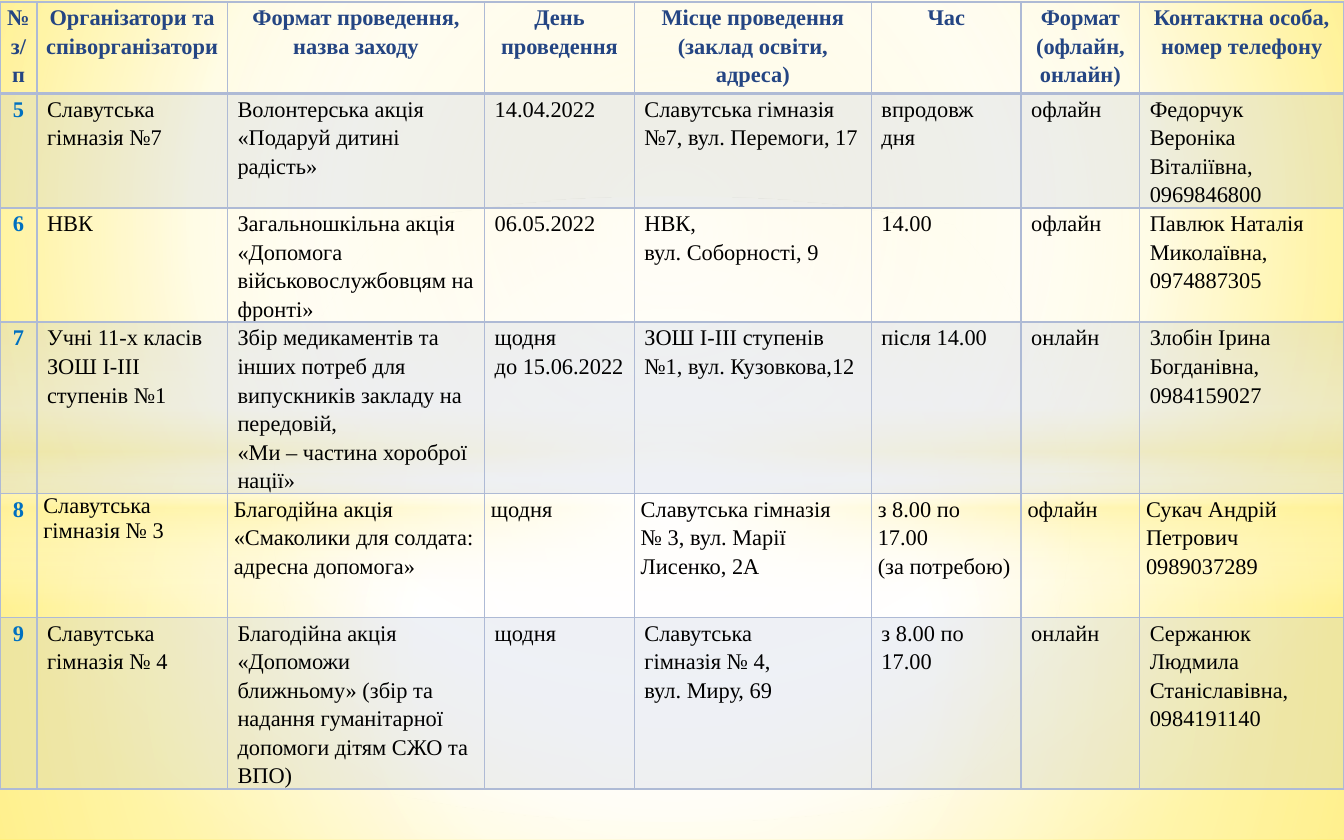
from typing import NamedTuple, Optional

from lxml import etree
from pptx import Presentation
from pptx.dml.color import RGBColor
from pptx.enum.shapes import MSO_SHAPE
from pptx.enum.text import MSO_ANCHOR, PP_ALIGN
from pptx.oxml.ns import qn
from pptx.util import Cm, Pt

RECTANGLE, OVAL = MSO_SHAPE.RECTANGLE, MSO_SHAPE.OVAL
CENTER, LEFT, TOP = PP_ALIGN.CENTER, PP_ALIGN.LEFT, MSO_ANCHOR.TOP

FONT = "Times New Roman"
GRID, HEADING, NUMBER, BLACK = "AEBAD5", "244583", "0070C0", "000000"
WHITE, YELLOW = "FFFFFF", "FFF39D"
WIDTH, HEIGHT = 25.4, 15.88
HORIZON = 8.94
NARROW, WIDE = 0.12, 0.19


class Stop(NamedTuple):
    position: int
    color: str
    opacity: int = 100


class Glow(NamedTuple):
    outline: int
    top: float
    height: float
    stops: list[Stop]
    focus: Optional[tuple[int, int, int, int]] = (50, 50, 50, 50)


class Event(NamedTuple):
    number: str
    organizer: str
    name: str
    day: str
    place: str
    time: str
    mode: str
    contact: str
    height: float
    inset: float = WIDE
    organizer_spacing: float = 1.15


class Style(NamedTuple):
    color: str
    bold: bool
    align: int
    inset: float
    spacing: float = 1.15


BACKDROP = [Stop(0, "FFF18D"), Stop(60, WHITE), Stop(100, "FFE94E")]
GLOWS = [
    Glow(RECTANGLE, HORIZON, HEIGHT - HORIZON,
         [Stop(0, WHITE, 91), Stop(37, WHITE, 76), Stop(100, YELLOW, 79)]),
    Glow(RECTANGLE, 0, HORIZON,
         [Stop(0, WHITE, 89), Stop(48, WHITE, 62), Stop(100, YELLOW, 79)]),
    Glow(RECTANGLE, 6.15, 5.28,
         [Stop(0, WHITE, 0), Stop(29, WHITE, 30), Stop(45, YELLOW, 40),
          Stop(55, WHITE, 26), Stop(65, YELLOW, 60), Stop(100, WHITE, 0)], None),
    Glow(OVAL, 3.71, 11.81, [Stop(0, WHITE), Stop(54, WHITE, 0)]),
]

COLUMN_WIDTHS = [0.7, 3.6, 4.86, 2.83, 4.48, 2.83, 2.24, 3.86]
HEADER_HEIGHT = 1.73
HEADERS = [
    "№\nз/п",
    "Організатори та співорганізатори",
    "Формат проведення, назва заходу",
    "День проведення",
    "Місце проведення\n(заклад освіти, адреса)",
    "Час",
    "Формат\n(офлайн, онлайн)",
    "Контактна особа,\nномер телефону",
]
EVENTS = [
    Event("5", "Славутська гімназія №7", "Волонтерська акція «Подаруй дитині радість»",
          "14.04.2022", "Славутська гімназія №7, вул. Перемоги, 17", "впродовж дня",
          "офлайн", "Федорчук Вероніка Віталіївна, 0969846800", 2.06),
    Event("6", "НВК", "Загальношкільна акція «Допомога військовослужбовцям на фронті»",
          "06.05.2022", "НВК,\nвул. Соборності, 9", "14.00",
          "офлайн", "Павлюк Наталія Миколаївна,\n0974887305", 2.06),
    Event("7", "Учні 11-х класів\nЗОШ І-ІІІ ступенів №1",
          "Збір медикаментів та інших потреб для випускників закладу на передовій,\n"
          "«Ми – частина хороброї нації»",
          "щодня\nдо 15.06.2022", "ЗОШ І-ІІІ ступенів №1, вул. Кузовкова,12",
          "після 14.00", "онлайн", "Злобін Ірина Богданівна,\n0984159027", 2.9),
    Event("8", "Славутська гімназія № 3",
          "Благодійна акція «Смаколики для солдата: адресна допомога»",
          "щодня", "Славутська гімназія\n№ 3, вул. Марії Лисенко, 2А",
          "з 8.00 по 17.00\n(за потребою)", "офлайн",
          "Сукач Андрій Петрович\n0989037289", 2.34, NARROW, 1.0),
    Event("9", "Славутська гімназія № 4",
          "Благодійна акція «Допоможи ближньому» (збір та надання гуманітарної "
          "допомоги дітям СЖО та ВПО)",
          "щодня", "Славутська\nгімназія № 4,\nвул. Миру, 69", "з 8.00 по 17.00",
          "онлайн", "Сержанюк Людмила Станіславівна,\n0984191140", 2.44),
]


def rgb(color: str) -> RGBColor:
    return RGBColor.from_string(color)


def add_color(parent, color: str, opacity: int = 100) -> None:
    tint = etree.SubElement(parent, qn("a:srgbClr"), val=color)
    if opacity < 100:
        etree.SubElement(tint, qn("a:alpha"), val=str(opacity * 1000))


def set_gradient(properties, stops: list[Stop], focus) -> None:
    solid = properties.find(qn("a:solidFill"))
    gradient = etree.Element(qn("a:gradFill"), rotWithShape="1")
    stop_list = etree.SubElement(gradient, qn("a:gsLst"))
    for stop in stops:
        entry = etree.SubElement(stop_list, qn("a:gs"), pos=str(stop.position * 1000))
        add_color(entry, stop.color, stop.opacity)
    if focus:
        radial = etree.SubElement(gradient, qn("a:path"), {"path": "circle"})
        sides = {side: str(value * 1000) for side, value in zip("ltrb", focus)}
        etree.SubElement(radial, qn("a:fillToRect"), sides)
    else:
        etree.SubElement(gradient, qn("a:lin"), ang="5400000", scaled="0")
    properties.replace(solid, gradient)


def draw_glow(slide, glow: Glow) -> None:
    shape = slide.shapes.add_shape(glow.outline, 0, Cm(glow.top), Cm(WIDTH), Cm(glow.height))
    shape.shadow.inherit = False
    shape.line.fill.background()
    shape.fill.solid()
    set_gradient(shape._element.spPr, glow.stops, glow.focus)


def set_borders(cell, top: float, bottom: float) -> None:
    properties = cell._tc.get_or_add_tcPr()
    for index, (side, points) in enumerate(zip("LRTB", (1, 1, top, bottom))):
        border = etree.Element(qn(f"a:ln{side}"), w=str(Pt(points)))
        add_color(etree.SubElement(border, qn("a:solidFill")), GRID)
        properties.insert(index, border)


def shade(cell, shaded: bool) -> None:
    if not shaded:
        cell.fill.background()
        return
    cell.fill.solid()
    cell.fill.fore_color.rgb = rgb(GRID)
    tint = cell._tc.tcPr.find(".//" + qn("a:srgbClr"))
    etree.SubElement(tint, qn("a:alpha"), val="20000")


def write(cell, text: str, style: Style) -> None:
    cell.margin_left = cell.margin_right = Cm(style.inset)
    cell.margin_top = cell.margin_bottom = 0
    cell.vertical_anchor = TOP
    for index, line in enumerate(text.split("\n")):
        frame = cell.text_frame
        paragraph = frame.add_paragraph() if index else frame.paragraphs[0]
        paragraph.alignment = style.align
        paragraph.line_spacing = style.spacing
        run = paragraph.add_run()
        run.text = line
        run.font.name = FONT
        run.font.size = Pt(12)
        run.font.bold = style.bold
        run.font.color.rgb = rgb(style.color)


def draw_schedule(slide) -> None:
    schedule = slide.shapes.add_table(
        len(EVENTS) + 1, len(HEADERS), 0, Cm(0.04), Cm(WIDTH), Cm(13.53)).table
    schedule.first_row = schedule.horz_banding = False
    for column, width in zip(schedule.columns, COLUMN_WIDTHS):
        column.width = Cm(width)
    schedule.rows[0].height = Cm(HEADER_HEIGHT)
    for column, heading in enumerate(HEADERS):
        cell = schedule.cell(0, column)
        write(cell, heading, Style(HEADING, True, CENTER, NARROW))
        shade(cell, False)
        set_borders(cell, 1, 2)
    for row, event in enumerate(EVENTS, 1):
        schedule.rows[row].height = Cm(event.height)
        body = Style(BLACK, False, LEFT, event.inset)
        styles = [Style(NUMBER, True, CENTER, NARROW),
                  body._replace(spacing=event.organizer_spacing)] + [body] * 6
        for column, (text, style) in enumerate(zip(event, styles)):
            cell = schedule.cell(row, column)
            write(cell, text, style)
            shade(cell, row % 2 == 1)
            set_borders(cell, 2 if row == 1 else 1, 1)


def main() -> None:
    deck = Presentation()
    deck.slide_width, deck.slide_height = Cm(WIDTH), Cm(HEIGHT)
    slide = deck.slides.add_slide(deck.slide_layouts[6])
    slide.background.fill.solid()
    set_gradient(slide._element.find(".//" + qn("p:bgPr")), BACKDROP, (20, 10, 20, 60))
    for glow in GLOWS:
        draw_glow(slide, glow)
    draw_schedule(slide)
    deck.save("out.pptx")


if __name__ == "__main__":
    main()
